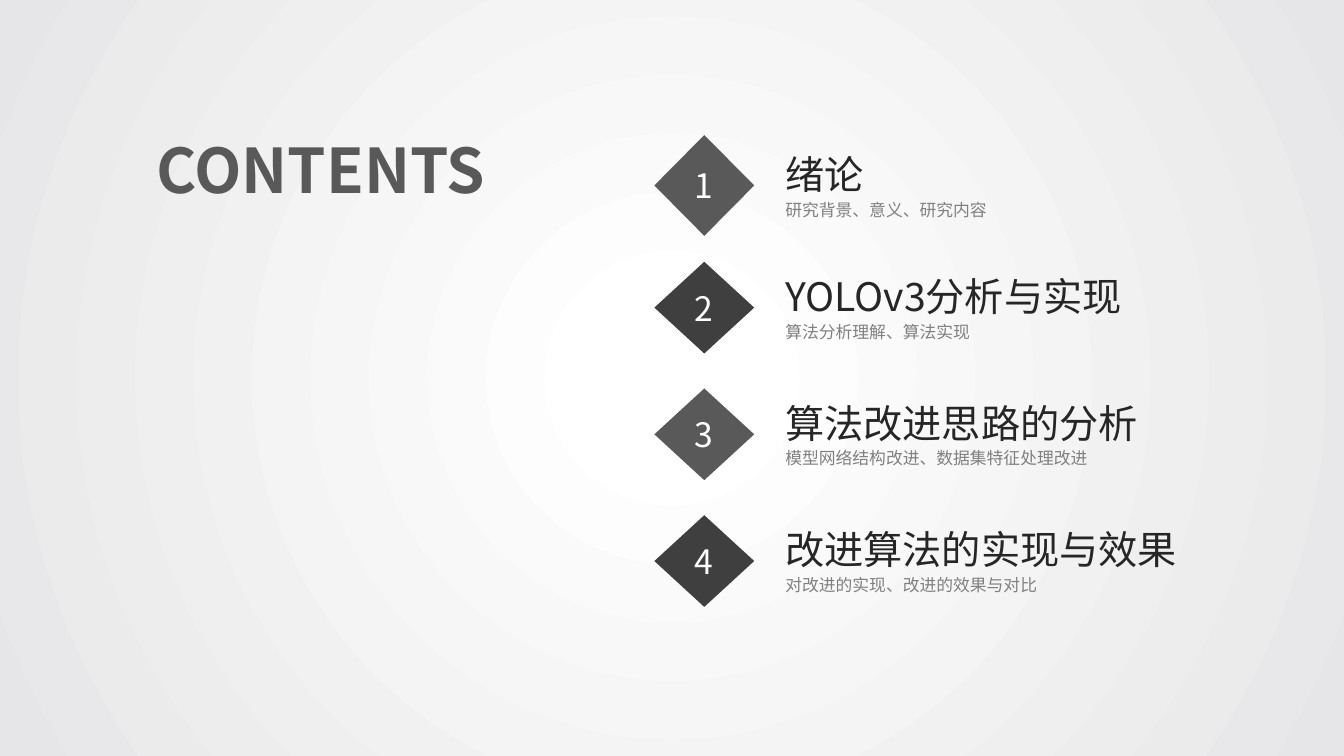
from lxml import etree
from pptx import Presentation
from pptx.dml.color import RGBColor
from pptx.enum.shapes import MSO_SHAPE
from pptx.enum.text import MSO_ANCHOR, MSO_AUTO_SIZE, PP_ALIGN
from pptx.oxml.ns import qn
from pptx.util import Inches, Pt

HEADING = "CONTENTS"
CHAPTERS = [
    ("绪论", "研究背景、意义、研究内容"),
    ("YOLOv3分析与实现", "算法分析理解、算法实现"),
    ("算法改进思路的分析", "模型网络结构改进、数据集特征处理改进"),
    ("改进算法的实现与效果", "对改进的实现、改进的效果与对比"),
]

FONT = "Noto Sans CJK SC"
WHITE = RGBColor(0xFF, 0xFF, 0xFF)
EDGE = RGBColor(0xE6, 0xE6, 0xE8)
GRAY = RGBColor(0x59, 0x59, 0x59)
DARK = RGBColor(0x3F, 0x3F, 0x3F)
INK = RGBColor(0x26, 0x26, 0x26)
MUTED = RGBColor(0x80, 0x80, 0x80)

DIAMOND = MSO_SHAPE.DIAMOND
MIDDLE = MSO_ANCHOR.MIDDLE
GROW = MSO_AUTO_SIZE.SHAPE_TO_FIT_TEXT
LEFT, CENTER, JUSTIFY = PP_ALIGN.LEFT, PP_ALIGN.CENTER, PP_ALIGN.JUSTIFY

# Lengths in inches
SLIDE_W, SLIDE_H = 13.33, 7.5
MARK_X, MARK_W, MARK_H, FIRST_MARK_H = 6.49, 0.99, 0.91, 1.0
TEXT_X, TEXT_W, TITLE_H, DETAIL_H = 7.69, 4.15, 0.57, 0.31
TOP, PITCH = 1.34, 1.257
TITLE_RISE, DETAIL_DROP = 0.4, 0.06


def set_text(shape, text, size, color, align=LEFT, bold=False):
    tf = shape.text_frame
    tf.word_wrap = True
    tf.text = text
    p = tf.paragraphs[0]
    p.alignment = align
    r = p.runs[0]
    r.font.size = Pt(size)
    r.font.bold = bold
    r.font.name = FONT
    r.font.color.rgb = color
    etree.SubElement(r.font._element, qn("a:ea")).set("typeface", FONT)
    return p


def add_text(s, x, y, w, h, *style, **options):
    box = s.shapes.add_textbox(Inches(x), Inches(y), Inches(w), Inches(h))
    p = set_text(box, *style, **options)
    box.text_frame.auto_size = GROW
    return p


def add_mark(s, y, h, number, color):
    mark = s.shapes.add_shape(DIAMOND, Inches(MARK_X), Inches(y), Inches(MARK_W), Inches(h))
    mark.shadow.inherit = False
    mark.fill.solid()
    mark.fill.fore_color.rgb = color
    mark.line.fill.background()
    mark.text_frame.vertical_anchor = MIDDLE
    set_text(mark, str(number), 24, WHITE, CENTER)


def set_radial_background(s):
    """Fill the background with a circular gradient around the slide's centre."""
    fill = s.background.fill
    fill.gradient()
    for stop, position, color in zip(fill.gradient_stops, (0.09, 1), (WHITE, EDGE)):
        stop.position = position
        stop.color.rgb = color
    grad = s.background._cSld.find(".//" + qn("a:gradFill"))
    lin = grad.find(qn("a:lin"))
    circle = etree.Element(qn("a:path"), {"path": "circle"})
    sides = dict.fromkeys("ltrb", "50000")
    etree.SubElement(circle, qn("a:fillToRect"), sides)
    grad.replace(lin, circle)


def main():
    prs = Presentation()
    prs.slide_width, prs.slide_height = Inches(SLIDE_W), Inches(SLIDE_H)
    s = prs.slides.add_slide(prs.slide_layouts[6])
    set_radial_background(s)

    for i, (title, detail) in enumerate(CHAPTERS):
        y = TOP + i * PITCH
        h = MARK_H if i else FIRST_MARK_H
        middle = y + h / 2
        add_mark(s, y, h, i + 1, DARK if i % 2 else GRAY)
        add_text(s, TEXT_X, middle - TITLE_RISE, TEXT_W, TITLE_H, title, 28, INK, JUSTIFY)
        p = add_text(s, TEXT_X, middle + DETAIL_DROP, TEXT_W, DETAIL_H, detail, 12, MUTED)
        p.line_spacing = 1.14

    add_text(s, 1.45, 1.26, 3.67, 0.84, HEADING, 44, GRAY, bold=True)
    prs.save("out.pptx")


if __name__ == "__main__":
    main()
